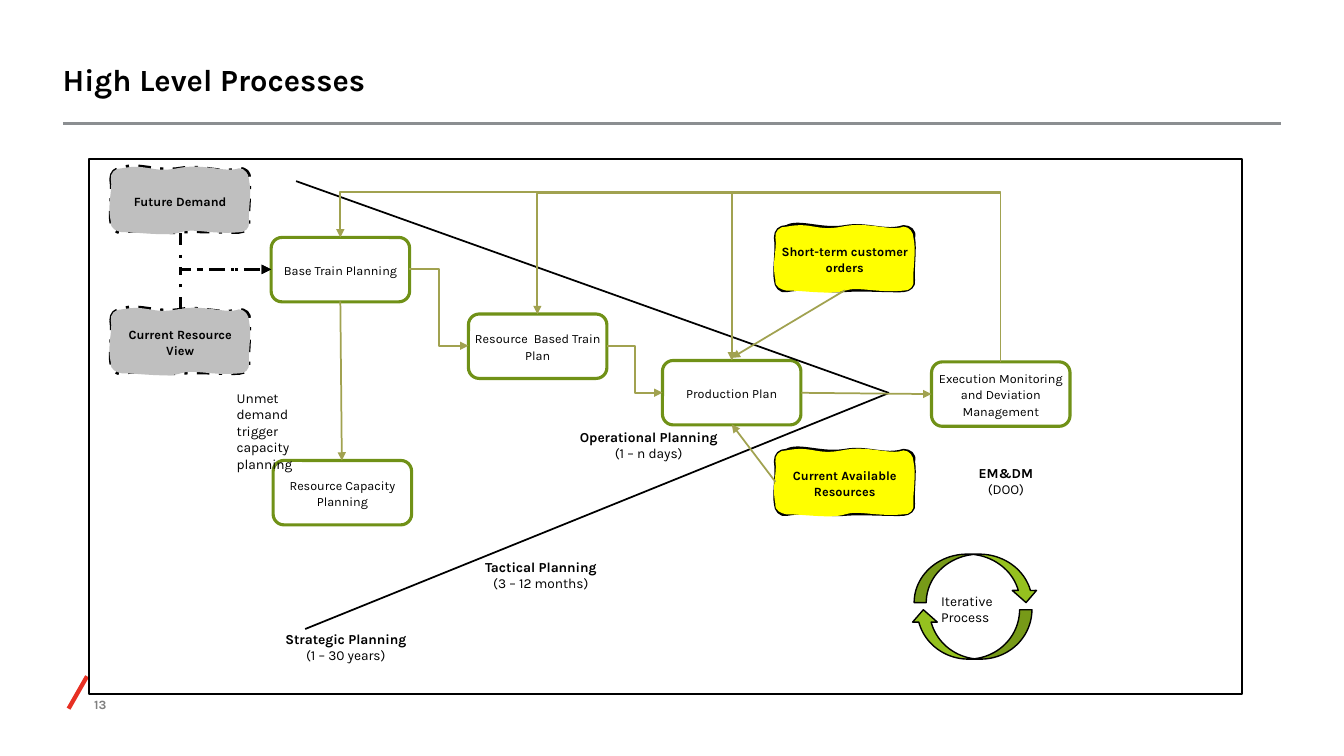
from lxml.etree import SubElement as sub
from pptx import Presentation
from pptx.dml.color import RGBColor
from pptx.enum.dml import MSO_LINE as Dash
from pptx.enum.shapes import MSO_CONNECTOR as Link, MSO_SHAPE as Form
from pptx.enum.text import MSO_ANCHOR as Anchor, PP_ALIGN as Align
from pptx.oxml.ns import qn
from pptx.util import Pt

BLACK = RGBColor(0x00, 0x00, 0x00)
WHITE = RGBColor(0xFF, 0xFF, 0xFF)
GRAY = RGBColor(0x80, 0x80, 0x80)
RULE = RGBColor(0x8B, 0x8E, 0x91)
RED = RGBColor(0xE7, 0x30, 0x23)
GREEN = RGBColor(0x70, 0x91, 0x17)
LIME = RGBColor(0x95, 0xC1, 0x1F)
OLIVE = RGBColor(0xA1, 0xA2, 0x50)
SILVER = RGBColor(0xBF, 0xBF, 0xBF)
YELLOW = RGBColor(0xFF, 0xFF, 0x00)

BOX_W, BOX_H = 98.9, 46
START = (0, 7.9)
# Cubic curves of the wavy boxes: two handles and an end point each
EDGE = [
    (0, 2.9, 2.9, 0, 7.9, 0), (16.6, -5, 33.1, 2.9, 49.7, 0),
    (65.5, -2.9, 78.5, 4.3, 91.4, 0), (95.8, 0, 100.1, 2.9, 98.6, 7.9),
    (100.1, 16.6, 97.9, 28.1, 98.6, 38.2), (99.4, 42.5, 95.8, 45.4, 91.4, 45.7),
    (79.9, 46.1, 61.9, 44.6, 49, 45.7), (35.3, 46.8, 28.1, 42.5, 7.9, 45.7),
    (3.6, 46.8, 0, 42.5, 0, 38.2), (-1.4, 31, 1.4, 16.6, 0, 7.9),
]
BODY = [
    (-0.7, 3.6, 2.9, -0.4, 7.9, 0), (26.6, -3.6, 28.8, 3.6, 47.5, 0),
    (66.2, -4, 82.1, 3.6, 91.4, 0), (95.8, 0, 98.6, 4.3, 98.6, 7.9),
    (100.8, 18, 97.9, 31.7, 98.6, 38.2), (99.4, 42.5, 95.8, 46.1, 91.4, 45.7),
    (72, 47.5, 59, 42.5, 49.7, 45.7), (40.3, 49, 18, 45.4, 7.9, 45.7),
    (4.3, 45, -0.7, 43.2, 0, 38.2), (-2.9, 24.5, 1.4, 16.6, 0, 7.9),
]


def write(shape, text, size=9.75, bold=0, color=BLACK, align=Align.LEFT,
          anchor=Anchor.TOP, inset=(7.2, 3.6, 7.2, 3.6), gap=None):
    """Fill a shape with text; the first `bold` lines are bold."""
    frame = shape.text_frame
    frame.word_wrap = True
    frame.vertical_anchor = anchor
    (frame.margin_left, frame.margin_top,
     frame.margin_right, frame.margin_bottom) = map(Pt, inset)
    frame.text = text
    for n, para in enumerate(frame.paragraphs):
        para.alignment = align
        if gap:
            para.line_spacing = gap
        for run in para.runs:
            font = run.font
            font.name, font.size, font.bold = "Karla", Pt(size), n < bold
            font.color.rgb = color


def label(slide, text, x, y, w, h, **form):
    write(slide.shapes.add_textbox(Pt(x), Pt(y), Pt(w), Pt(h)), text, **form)


def caption(shape, text, bold=0):
    write(shape, text, size=8.95, bold=bold, align=Align.CENTER,
          anchor=Anchor.MIDDLE, inset=(2.4, 2.4, 2.4, 2.4), gap=1.1)


def paint(shape, fill, line, width=1, dash=None):
    shape.shadow.inherit = False
    shape.fill.solid()
    shape.fill.fore_color.rgb = fill
    stroke(shape.line, line, width, dash)


def stroke(line, color, width, dash=None):
    line.color.rgb, line.width = color, Pt(width)
    if dash:
        line.dash_style = dash


def block(slide, form, x, y, w, h, **look):
    shape = slide.shapes.add_shape(form, Pt(x), Pt(y), Pt(w), Pt(h))
    paint(shape, **look)
    return shape


def step(slide, text, x, y):
    shape = block(slide, Form.ROUNDED_RECTANGLE, x, y, BOX_W, BOX_H,
                  fill=WHITE, line=GREEN, width=2.25)
    caption(shape, text)


def curve(paths, chain, **mode):
    """Add a closed chain of cubic curves to a path list."""
    path = sub(paths, qn("a:path"), w=str(Pt(BOX_W)), h=str(Pt(BOX_H)), **mode)

    def spot(parent, x, y):
        sub(parent, qn("a:pt"), x=str(Pt(x)), y=str(Pt(y)))

    spot(sub(path, qn("a:moveTo")), *START)
    for arc in chain:
        bend = sub(path, qn("a:cubicBezTo"))
        for n in (0, 2, 4):
            spot(bend, *arc[n:n + 2])
    sub(path, qn("a:close"))


def wavy(slide, text, x, y, fill, dash=None):
    """Draw a hand-drawn style box: a wavy edge below a wavy body."""
    pen = slide.shapes.build_freeform(Pt(x), Pt(y))
    pen.add_line_segments([(Pt(x + BOX_W), Pt(y)), (Pt(x + BOX_W), Pt(y + BOX_H))])
    shape = pen.convert_to_shape()
    paths = shape._element.spPr.find(qn("a:custGeom")).find(qn("a:pathLst"))
    paths.remove(paths[0])
    curve(paths, EDGE, fill="none")
    curve(paths, BODY, stroke="0")
    paint(shape, fill, BLACK, 2.25, dash)
    caption(shape, text, bold=1)


def join(slide, x1, y1, x2, y2, color=OLIVE, width=1.25, dash=None,
         head=True, kind=Link.STRAIGHT):
    link = slide.shapes.add_connector(kind, Pt(x1), Pt(y1), Pt(x2), Pt(y2))
    stroke(link.line, color, width, dash)
    props = link._element.spPr
    if head:
        sub(props.find(qn("a:ln")), qn("a:tailEnd"), type="triangle")
    sub(props, qn("a:effectLst"))
    return link


def rise(slide, x1, y1, x2, y2, turn=None, **look):
    """Draw an elbow that leaves vertically; with `turn` it bends at that height."""
    w, h = abs(y2 - y1), abs(x2 - x1)
    x, y = (x1 + x2 - w) / 2, (y1 + y2 - h) / 2
    link = join(slide, x, y, x + w, y + h, kind=Link.ELBOW, **look)
    props = link._element.spPr
    frame = props.find(qn("a:xfrm"))
    frame.set("rot", str(270 * 60000))
    if y2 > y1:
        frame.set("flipH", "1")
    if x2 < x1:
        frame.set("flipV", "1")
    geom = props.find(qn("a:prstGeom"))
    if turn is None:
        geom.set("prst", "bentConnector2")
    else:
        ratio = round((turn - y1) / (y2 - y1) * 100000)
        sub(geom.find(qn("a:avLst")), qn("a:gd"), name="adj1", fmla=f"val {ratio}")


def main():
    deck = Presentation()
    deck.slide_width, deck.slide_height = Pt(960), Pt(540)
    slide = deck.slides.add_slide(deck.slide_layouts[5])

    title = slide.shapes.title
    title.left, title.top, title.width, title.height = map(Pt, (44.8, 28, 823.7, 57))
    write(title, "High Level Processes", size=22, bold=1, anchor=Anchor.MIDDLE,
          inset=(0, 0, 0, 0))
    label(slide, "13", 35.1, 495.4, 41, 16.6, size=9, bold=1, color=GRAY,
          align=Align.RIGHT, anchor=Anchor.BOTTOM, inset=(0, 0, 0, 3.6))
    join(slide, 44.9, 88.3, 915.1, 88.3, RULE, 1.65, head=False)
    join(slide, 49, 506.2, 62.2, 483.1, RED, 3.05, head=False)
    block(slide, Form.RECTANGLE, 63.6, 113.5, 823.7, 382.3, fill=WHITE, line=BLACK)

    for text, x, y in (
        ("Production Plan", 473.2, 257.5),
        ("Resource  Based Train Plan", 334.6, 224.3),
        ("Base Train Planning", 193.7, 169.6),
        ("Resource Capacity Planning", 195.1, 328.9),
        ("Execution Monitoring and Deviation Management", 665.4, 258.5),
    ):
        step(slide, text, x, y)

    for x, y in ((211.5, 129.4), (218, 449.3)):
        join(slide, x, y, 635, 280.7, BLACK, head=False)

    for text, x, y, w in (
        ("Strategic Planning\n(1 – 30 years)", 193.7, 446.9, 106.6),
        ("Tactical Planning\n(3 – 12 months)", 334.8, 395.7, 103),
        ("Operational Planning\n(1 – n days)", 398.9, 302.8, 128.9),
        ("EM&DM\n(DOO)", 660.2, 328.4, 116.6),
    ):
        label(slide, text, x, y, w, 31, bold=1, align=Align.CENTER)

    join(slide, 243.1, 215.3, 244.2, 329)
    join(slide, 572.4, 280.6, 665.3, 281.5)
    join(slide, 292.3, 192.4, 334.6, 247, kind=Link.ELBOW)
    join(slide, 433.5, 247, 473.2, 280.5, kind=Link.ELBOW)
    label(slide, "Unmet demand trigger capacity planning", 162, 274.9, 81.4, 42.5)

    lower = block(slide, Form.CURVED_DOWN_ARROW, 650.7, 435.5, 86.4, 35.3,
                  fill=LIME, line=BLACK)
    lower.rotation = 180
    block(slide, Form.CURVED_DOWN_ARROW, 653, 395.8, 88.6, 34.6, fill=LIME, line=BLACK)
    label(slide, "Iterative\nProcess", 665.2, 419.7, 64.8, 31)

    for text, y, port in (("Future Demand", 120.2, 166.3),
                          ("Current Resource View", 221, 221)):
        wavy(slide, text, 79.2, y, SILVER, Dash.DASH_DOT)
        rise(slide, 128.9, port, 193.7, 192.4, color=BLACK, width=2.25,
             dash=Dash.DASH_DOT)

    wavy(slide, "Short-term customer orders", 553.9, 161.9, YELLOW)
    for x, y, turn in ((383.8, 224.4, 138.2), (243.1, 169.7, 137),
                       (522.7, 257.5, 137)):
        rise(slide, 714.7, 258.5, x, y, turn)
    join(slide, 603.4, 207.4, 522.7, 255.6)
    wavy(slide, "Current Available Resources", 553.9, 321.7, YELLOW)
    join(slide, 553.9, 344.2, 522.7, 303.1)

    deck.save("out.pptx")


if __name__ == "__main__":
    main()
